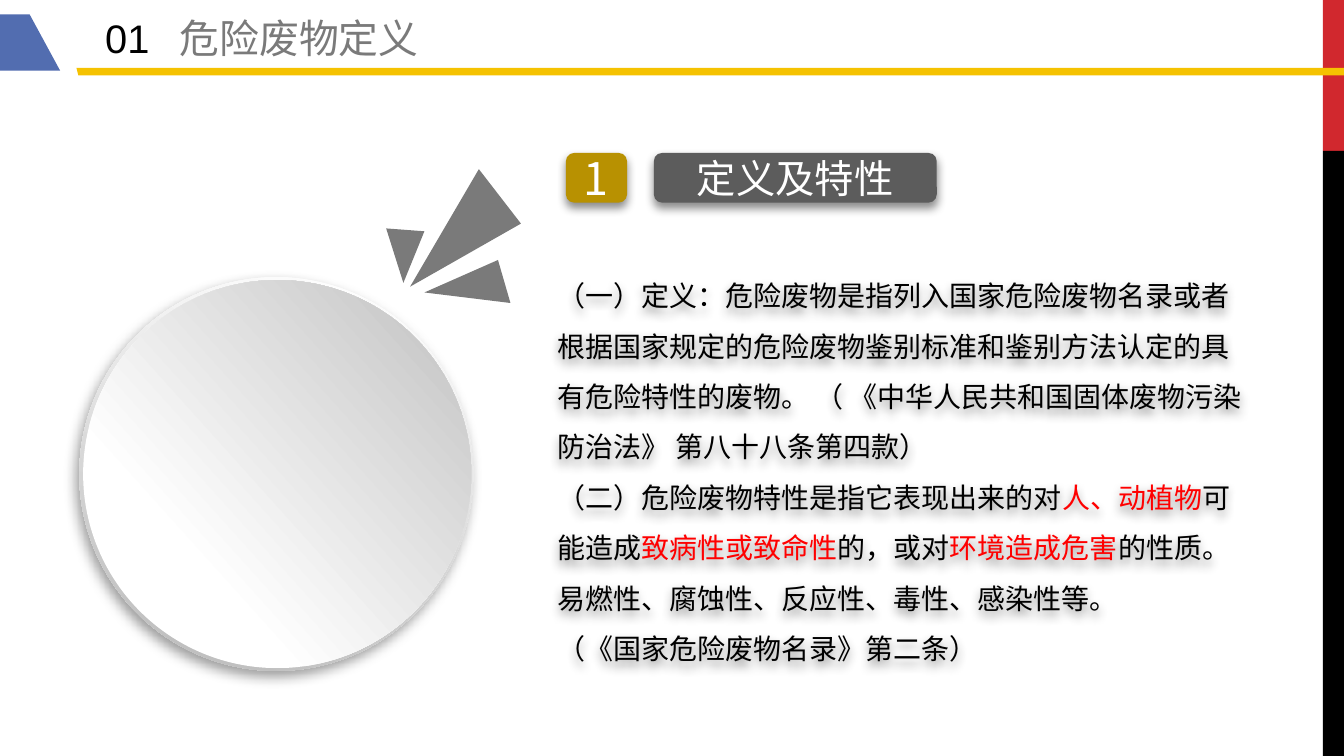
from lxml import etree
from pptx import Presentation
from pptx.dml.color import RGBColor
from pptx.enum.shapes import MSO_SHAPE as Shape
from pptx.enum.text import MSO_ANCHOR as Anchor, MSO_AUTO_SIZE as AutoSize, PP_ALIGN as Align
from pptx.oxml.ns import qn
from pptx.util import Inches, Pt

LATIN, CJK = "Arial", "Noto Sans CJK SC"
BLACK, WHITE, RED, GREY = "000000", "FFFFFF", "FF0000", "7A7A7A"

DEFINITION = [
    [("（一）定义：危险废物是指列入国家危险废物名录或者根据国家规定的危险废物鉴别标准"
      "和鉴别方法认定的具有危险特性的废物。 （ 《中华人民共和国固体废物污染防治法》 "
      "第八十八条第四款）", BLACK)],
    [("（二）危险废物特性是指它表现出来的对", BLACK), ("人、动植物", RED),
     ("可能造成", BLACK), ("致病性或致命性", RED), ("的，或对", BLACK),
     ("环境造成危害", RED), ("的性质。 易燃性、腐蚀性、反应性、毒性、感染性等。", BLACK)],
    [("（《国家危险废物名录》第二条）", BLACK)],
]
RAYS = [
    [(4.29, 3), (5.01, 1.77), (5.45, 2.34)],
    [(4.44, 3.06), (5.21, 2.72), (5.34, 3.17)],
    [(4.22, 2.96), (4.04, 2.39), (4.44, 2.42)],
]


def color(hex_code):
    return RGBColor.from_string(hex_code)


def paint(shape, fill):
    shape.fill.solid()
    shape.fill.fore_color.rgb = color(fill)
    shape.line.fill.background()
    shape.shadow.inherit = False


def add_shadow(shape, alpha, blur, distance, angle):
    shape.shadow.inherit = False
    effects = shape._element.spPr.find(qn("a:effectLst"))
    outer = etree.SubElement(effects, qn("a:outerShdw"), blurRad=str(Pt(blur)),
                             dist=str(Pt(distance)), dir=str(angle * 60000),
                             algn="ctr", rotWithShape="0")
    tint = etree.SubElement(outer, qn("a:srgbClr"), val=BLACK)
    etree.SubElement(tint, qn("a:alpha"), val=str(alpha * 1000))


def add_run(paragraph, text, size, text_color, font=LATIN):
    run = paragraph.add_run()
    run.text = text
    run.font.size = Pt(size)
    run.font.name = font
    run.font.color.rgb = color(text_color)
    etree.SubElement(run._r.get_or_add_rPr(), qn("a:ea"), typeface=CJK)


def place(shape, left, top, width, height):
    shape.left, shape.top = Inches(left), Inches(top)
    shape.width, shape.height = Inches(width), Inches(height)


def set_frame(frame, inset=0, wrap=True):
    frame.word_wrap = wrap
    frame.auto_size = AutoSize.NONE
    frame.vertical_anchor = Anchor.MIDDLE
    frame.margin_left = frame.margin_right = Inches(inset)
    frame.margin_top = frame.margin_bottom = Inches(inset / 2)


def add_block(slide, kind, left, top, width, height, fill):
    block = slide.shapes.add_shape(kind, Inches(left), Inches(top), Inches(width), Inches(height))
    paint(block, fill)
    return block


def add_polygon(slide, points, fill):
    start, *rest = [(Inches(x), Inches(y)) for x, y in points]
    builder = slide.shapes.build_freeform(*start)
    builder.add_line_segments(rest, close=True)
    paint(builder.convert_to_shape(), fill)


def add_disc(slide, left, top, diameter, rotation, stops):
    disc = add_block(slide, Shape.OVAL, left, top, diameter, diameter, WHITE)
    disc.rotation = rotation
    disc.fill.gradient()
    disc.fill.gradient_angle = 315
    for stop, (position, hex_code) in zip(disc.fill.gradient_stops, stops):
        stop.position = position
        stop.color.rgb = color(hex_code)
    return disc


def add_badge(slide, left, width, fill, text, size, font):
    badge = add_block(slide, Shape.ROUNDED_RECTANGLE, left, 1.6, width, 0.52, fill)
    add_shadow(badge, 46, 7, 4, 90)
    set_frame(badge.text_frame, wrap=False)
    paragraph = badge.text_frame.paragraphs[0]
    paragraph.alignment = Align.CENTER
    add_run(paragraph, text, size, WHITE, font)


def fill_title(title):
    place(title, 1.1, 0.12, 8.56, 0.54)
    set_frame(title.text_frame)
    paragraph = title.text_frame.paragraphs[0]
    paragraph.alignment = Align.LEFT
    tabs = etree.SubElement(paragraph._p.get_or_add_pPr(), qn("a:tabLst"))
    etree.SubElement(tabs, qn("a:tab"), pos=str(Inches(0.78)), algn="l")
    add_run(paragraph, "01\t", 30, BLACK)
    add_run(paragraph, "危险废物定义", 30, GREY, CJK)


def fill_definition(body):
    place(body, 5.73, 1.92, 7.5, 5.86)
    set_frame(body.text_frame, inset=0.1)
    add_shadow(body, 46, 7, 4, 90)
    for index, parts in enumerate(DEFINITION):
        frame = body.text_frame
        paragraph = frame.add_paragraph() if index else frame.paragraphs[0]
        paragraph.line_spacing = 1.5
        paragraph.space_before = Pt(0)
        properties = paragraph._p.get_or_add_pPr()
        properties.set("marL", "0")
        properties.set("indent", "0")
        etree.SubElement(properties, qn("a:buNone"))
        for text, text_color in parts:
            add_run(paragraph, text, 21.1, text_color)


def main():
    deck = Presentation()
    deck.slide_width, deck.slide_height = Inches(14.06), Inches(7.91)
    slide = deck.slides.add_slide(deck.slide_layouts[1])

    add_block(slide, Shape.RECTANGLE, 13.84, 0, 0.22, 1.58, "D1282E")
    add_block(slide, Shape.RECTANGLE, 13.84, 1.58, 0.22, 6.33, BLACK)

    rim = add_disc(slide, 0.83, 2.9, 4.12, 62.3, [(0.17, WHITE), (0.88, "B8B8B8")])
    add_shadow(rim, 39, 10, 5, 123)
    add_disc(slide, 0.87, 2.93, 4.06, 273, [(0.29, WHITE), (0.98, "BFBFBF")])
    for ray in RAYS:
        add_polygon(slide, ray, GREY)

    add_badge(slide, 5.92, 0.64, "B89101", "1", 33.8, CJK)
    add_badge(slide, 6.84, 2.96, "5C5C5C", "定义及特性", 29.6, LATIN)
    fill_definition(slide.placeholders[1])

    add_polygon(slide, [(0.8, 0.71), (14.06, 0.71), (14.06, 0.79), (0.82, 0.79)], "F5C201")
    add_polygon(slide, [(0.31, 0.15), (0.63, 0.74), (0, 0.74), (0, 0.15)], "526DB0")
    fill_title(slide.shapes.title)

    deck.save("out.pptx")


if __name__ == "__main__":
    main()
